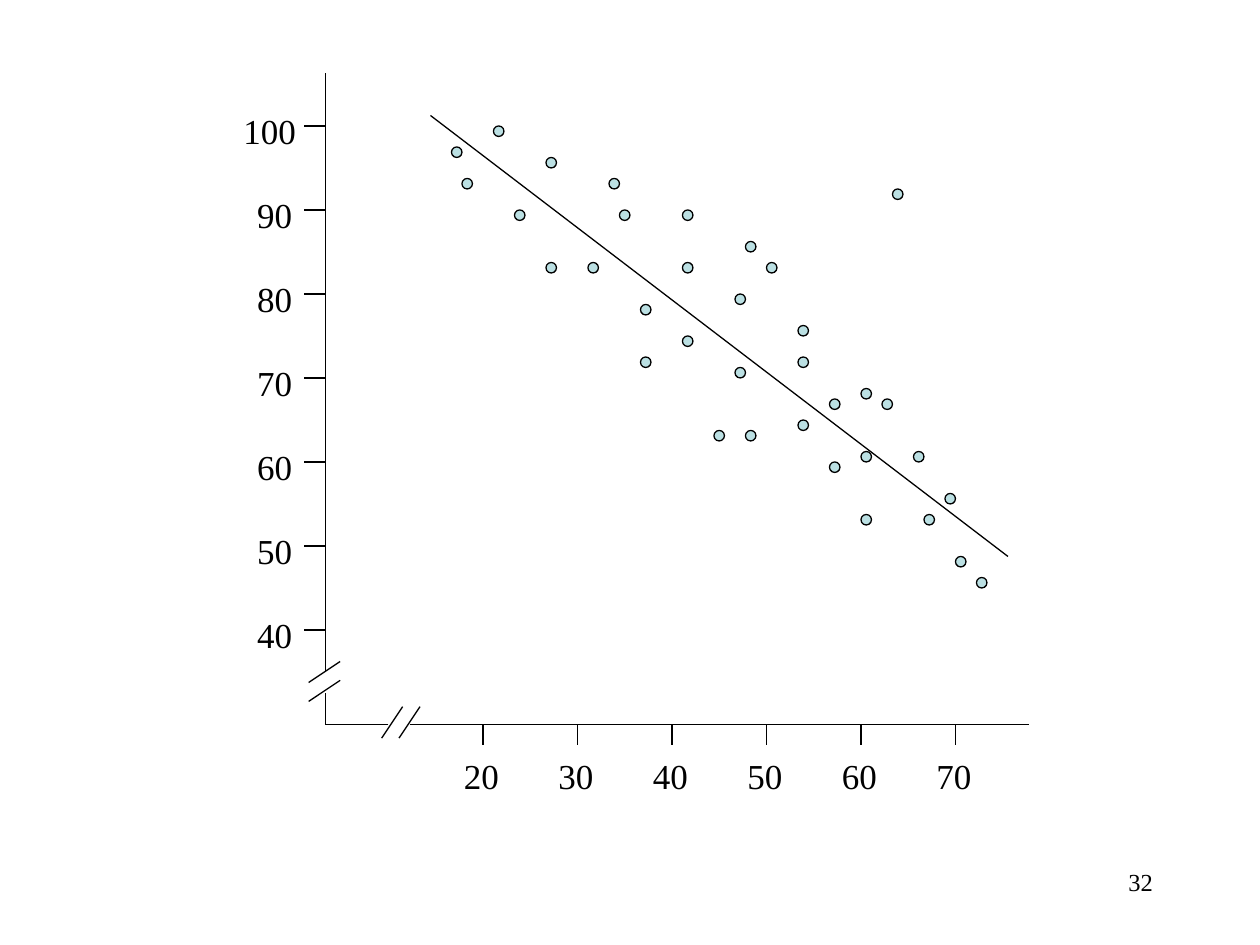
from lxml import etree
from pptx import Presentation
from pptx.dml.color import RGBColor
from pptx.enum.shapes import MSO_CONNECTOR, MSO_SHAPE
from pptx.enum.text import MSO_AUTO_SIZE, PP_ALIGN
from pptx.oxml.ns import qn
from pptx.util import Inches, Pt

STRAIGHT = MSO_CONNECTOR.STRAIGHT
OVAL = MSO_SHAPE.OVAL
LEFT, RIGHT = PP_ALIGN.LEFT, PP_ALIGN.RIGHT
FIT_SHAPE, NO_FIT = MSO_AUTO_SIZE.SHAPE_TO_FIT_TEXT, MSO_AUTO_SIZE.NONE

CELL = 1 / 12  # grid pitch in inches: 120 columns by 90 rows
AXIS_X, AXIS_Y = 31, 69  # column of the vertical axis, row of the horizontal one
TICK = 2
LABEL_HEIGHT = 5.2

# Top-left grid cell of each observation
OBSERVATIONS = [
    (43, 14), (44, 17), (49, 20), (52, 25), (56, 25), (61, 29), (61, 34),
    (65, 32), (70, 35), (68, 41), (71, 41), (76, 40), (82, 43), (79, 44),
    (82, 49), (88, 49), (91, 53), (93, 55), (47, 12), (52, 15), (58, 17),
    (59, 20), (65, 20), (65, 25), (71, 23), (73, 25), (70, 28), (76, 31),
    (76, 34), (79, 38), (84, 38), (87, 43), (90, 47), (85, 18), (82, 37),
]


def color(hex_string):
    return RGBColor.from_string(hex_string)


def grid(cells):
    return Inches(cells * CELL)


class ScatterSlide:
    ink, dot_fill = "000000", "BBE0E3"
    font, line_width = "Times New Roman", 0.75

    def __init__(self, slide):
        self.slide = slide

    def stroke(self, line):
        line.color.rgb = color(self.ink)
        line.width = Pt(self.line_width)

    def line(self, x1, y1, x2, y2):
        connector = self.slide.shapes.add_connector(
            STRAIGHT, grid(x1), grid(y1), grid(x2), grid(y2))
        self.stroke(connector.line)
        etree.SubElement(connector._element.spPr, qn("a:effectLst"))

    def dot(self, column, row):
        dot = self.slide.shapes.add_shape(
            OVAL, grid(column), grid(row), grid(1), grid(1))
        dot.shadow.inherit = False
        dot.fill.solid()
        dot.fill.fore_color.rgb = color(self.dot_fill)
        self.stroke(dot.line)

    def text(self, wording, x, y, width, height, size=20, align=LEFT, wrap=False):
        frame = self.slide.shapes.add_textbox(
            grid(x), grid(y), grid(width), grid(height)).text_frame
        frame.word_wrap = wrap
        frame.auto_size = NO_FIT if wrap else FIT_SHAPE
        frame.text = wording
        paragraph = frame.paragraphs[0]
        paragraph.alignment = align
        font = paragraph.runs[0].font
        font.name, font.size = self.font, Pt(size)
        font.color.rgb = color(self.ink)


def main():
    deck = Presentation()
    deck.slide_width, deck.slide_height = grid(120), grid(90)
    plot = ScatterSlide(deck.slides.add_slide(deck.slide_layouts[6]))

    # Axes, each interrupted by a break near the origin
    plot.line(AXIS_X, 7, AXIS_X, 64)
    plot.line(AXIS_X, AXIS_Y, AXIS_X, 66)
    plot.line(39, AXIS_Y, 98, AXIS_Y)
    plot.line(37, AXIS_Y, AXIS_X, AXIS_Y)
    for shift in (0, 1.65):
        plot.line(40 - shift, 67.3, 38 - shift, 70.3)
    for shift in (0, 1.8):
        plot.line(29.4, 65 + shift, 32.4, 63 + shift)

    # Vertical scale
    for step, value in enumerate(range(40, 101, 10)):
        row = 60 - 8 * step
        plot.line(AXIS_X, row, AXIS_X - TICK, row)
        left, width = (22, 7.4) if value == 100 else (23.3, 5.8)
        plot.text(str(value), left, row - 2.2, width, LABEL_HEIGHT)

    # Horizontal scale
    for step, value in enumerate(range(20, 71, 10)):
        column = 46 + 9 * step
        plot.line(column, AXIS_Y, column, AXIS_Y + TICK)
        plot.text(str(value), column - 3, AXIS_Y + 2.3, 5.8, LABEL_HEIGHT)

    # Trend line and observations
    plot.line(41, 11, 96, 53)
    for column, row in OBSERVATIONS:
        plot.dot(column, row)

    # Page number
    plot.text("32", 86, 82, 25, 6, size=14, align=RIGHT, wrap=True)

    deck.save("out.pptx")


if __name__ == "__main__":
    main()
